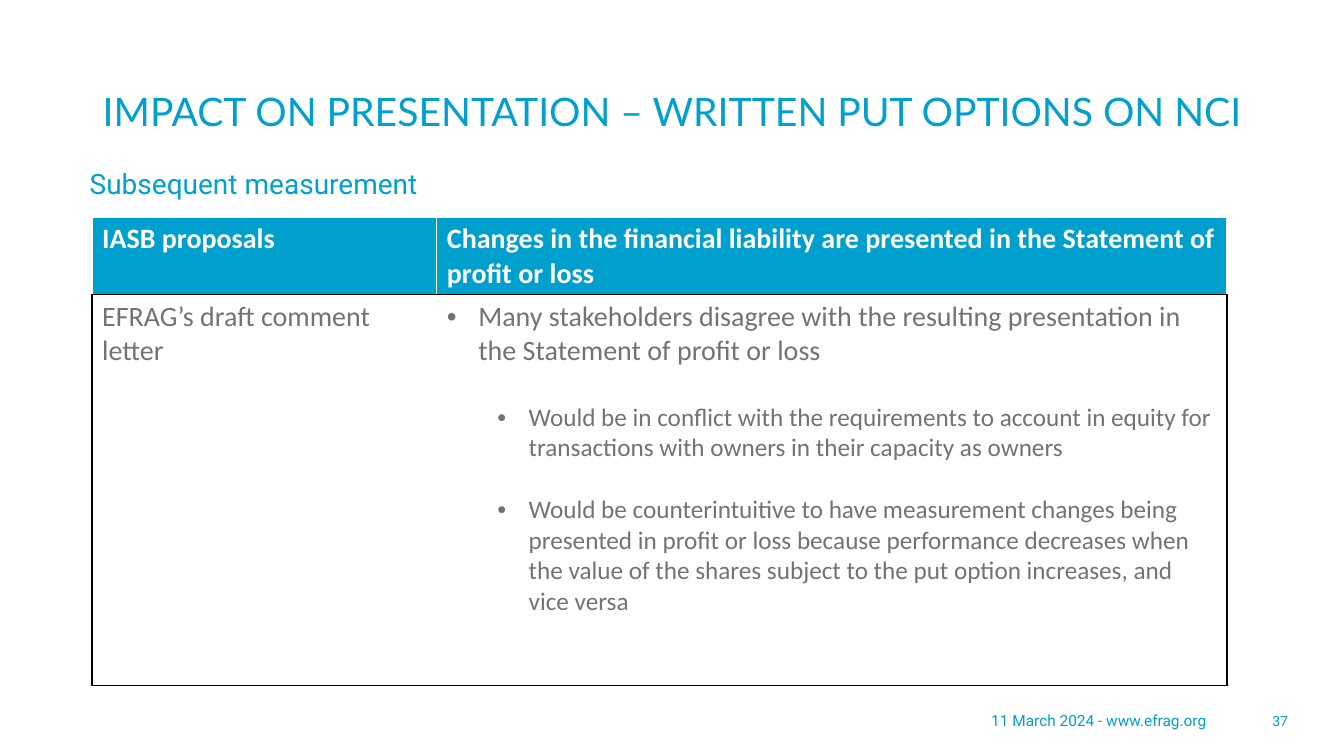
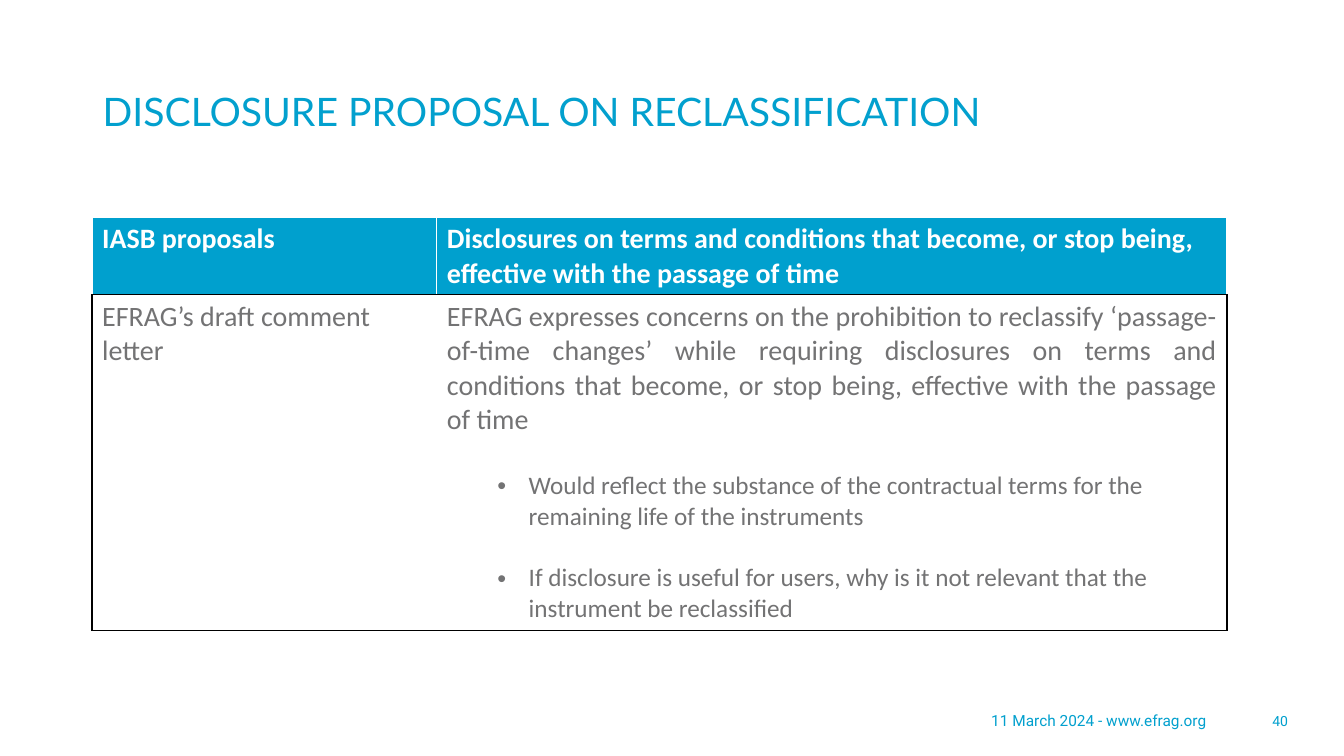
import pptx
import pptx.dml.color
import pptx.enum.text
import pptx.oxml.ns
import pptx.util
from lxml import etree

Cm = pptx.util.Cm
Pt = pptx.util.Pt
ALIGN = pptx.enum.text.PP_ALIGN
ANCHOR = pptx.enum.text.MSO_ANCHOR
qn = pptx.oxml.ns.qn

BLUE, TITLE_BLUE, SUB_BLUE = "00A0CE", "02A0CE", "00A1CE"
GREY, WHITE, BLACK = "737374", "FFFFFF", "000000"
COLS = (8.69, 19.91)
HEADER_H = 1.96
INDENT = 0.79

# Body paragraph styles: size, left margin (None = no bullet), level, alignment
STYLES = {
    "plain": (20, None, 0, ALIGN.LEFT),
    "justified": (20, None, 0, ALIGN.JUSTIFY),
    "bullet": (20, INDENT, 0, ALIGN.LEFT),
    "sub": (18, 2.06, 1, ALIGN.LEFT),
}


def color(hex_text):
    return pptx.dml.color.RGBColor.from_string(hex_text)


def add_run(p, text, size, font, hex_text, bold=False):
    r = p.add_run()
    r.text = text
    r.font.size = Pt(size)
    r.font.name = font
    r.font.bold = bold
    r.font.color.rgb = color(hex_text)


def add_text(s, box, text, size, font, hex_text, align=ALIGN.LEFT, spacing=1.0):
    tf = s.shapes.add_textbox(*map(Cm, box)).text_frame
    tf.word_wrap = True
    tf.vertical_anchor = ANCHOR.MIDDLE
    tf.margin_left, tf.margin_right = Cm(0.25), Cm(0.2)
    p = tf.paragraphs[0]
    p.alignment = align
    p.line_spacing = spacing
    add_run(p, text, size, font, hex_text)


def add_title(s, text):
    add_text(s, (2.34, 1.02, 29.21, 3.68), text, 28, "Lato", TITLE_BLUE, spacing=0.9)


def add_subtitle(s, text):
    add_text(s, (2.01, 3.94, 29.21, 1.45), text, 20, "Roboto", SUB_BLUE, spacing=0.9)


def add_footer(s, number):
    top, height = 17.65, 1.02
    add_text(s, (19.18, top, 11.43, height), "11 March 2024 - www.efrag.org",
             11, "Roboto", TITLE_BLUE, ALIGN.RIGHT)
    add_text(s, (30.96, top, 1.7, height), number, 10, "Roboto", BLUE, ALIGN.RIGHT)


def set_borders(cell, left, right, top, bottom):
    tc_pr = cell._tc.get_or_add_tcPr()
    sides = zip(("lnL", "lnR", "lnT", "lnB"), (left, right, top, bottom))
    for i, (side, hex_text) in enumerate(sides):
        ln = etree.Element(qn("a:" + side), w=str(Pt(1)))
        fill = etree.SubElement(ln, qn("a:solidFill"))
        etree.SubElement(fill, qn("a:srgbClr"), val=hex_text)
        tc_pr.insert(i, ln)


def fill_cell(cell, items, hex_text, bold=False):
    """Write (style, text) items, one paragraph each."""
    tf = cell.text_frame
    for i, (style, text) in enumerate(items):
        size, margin, level, align = STYLES[style]
        p = tf.add_paragraph() if i else tf.paragraphs[0]
        p.level = level
        p.alignment = align
        if margin is not None:
            p_pr = p._p.get_or_add_pPr()
            p_pr.set("marL", str(Cm(margin)))
            p_pr.set("indent", str(-Cm(INDENT)))
            etree.SubElement(p_pr, qn("a:buFont"), typeface="Arial")
            etree.SubElement(p_pr, qn("a:buChar"), char="•")
        if i:
            # The gap is one line of the larger neighbouring text
            p.space_before = Pt(24 if i == 1 else 22)
        add_run(p, text, size, "Calibri", hex_text, bold)


def add_proposal_table(s, left, top, body_h, proposal, response):
    frame = s.shapes.add_table(2, 2, Cm(left), Cm(top), Cm(sum(COLS)), Cm(HEADER_H + body_h))
    table = frame.table
    table.horz_banding = False
    for col, width in zip(table.columns, COLS):
        col.width = Cm(width)
    for row, height in zip(table.rows, (HEADER_H, body_h)):
        row.height = Cm(height)

    # Header row
    for c, text in enumerate(("IASB proposals", proposal)):
        cell = table.cell(0, c)
        fill_cell(cell, [("plain", text)], WHITE, True)
        cell.fill.solid()
        cell.fill.fore_color.rgb = color(BLUE)
        set_borders(cell, WHITE, WHITE, WHITE, BLACK)

    # Body row, framed in black on the outside only
    bodies = ([("plain", "EFRAG’s draft comment letter")], response)
    for c, (items, sides) in enumerate(zip(bodies, ((BLACK, WHITE), (WHITE, BLACK)))):
        cell = table.cell(1, c)
        fill_cell(cell, items, GREY)
        cell.fill.background()
        set_borders(cell, *sides, BLACK, BLACK)


def add_proposal_slide(prs, number, title, subtitle, body_h, proposal, response):
    s = prs.slides.add_slide(prs.slide_layouts[6])
    add_footer(s, number)
    add_title(s, title)
    add_proposal_table(s, 2.32, 5.47, body_h, proposal, response)
    if subtitle:
        add_subtitle(s, subtitle)


def main():
    prs = pptx.Presentation()
    prs.slide_width, prs.slide_height = Cm(33.87), Cm(19.05)

    add_proposal_slide(
        prs, "37", "IMPACT ON PRESENTATION – WRITTEN PUT OPTIONS ON NCI",
        "Subsequent measurement", 9.84,
        "Changes in the financial liability are presented in the Statement of profit or loss",
        [("bullet", "Many stakeholders disagree with the resulting presentation in "
                    "the Statement of profit or loss"),
         ("sub", "Would be in conflict with the requirements to account in equity for "
                 "transactions with owners in their capacity as owners"),
         ("sub", "Would be counterintuitive to have measurement changes being presented in "
                 "profit or loss because performance decreases when the value of the shares "
                 "subject to the put option increases, and vice versa")])

    add_proposal_slide(
        prs, "40", "DISCLOSURE PROPOSAL ON RECLASSIFICATION", None, 8.46,
        "Disclosures on terms and conditions that become, or stop being, "
        "effective with the passage of time",
        [("justified", "EFRAG expresses concerns on the prohibition to reclassify "
                       "‘passage-of-time changes’ while requiring disclosures on terms and "
                       "conditions that become, or stop being, effective with the passage of time"),
         ("sub", "Would reflect the substance of the contractual terms for the "
                 "remaining life of the instruments"),
         ("sub", "If disclosure is useful for users, why is it not relevant that the "
                 "instrument be reclassified")])

    prs.save("out.pptx")


if __name__ == "__main__":
    main()
